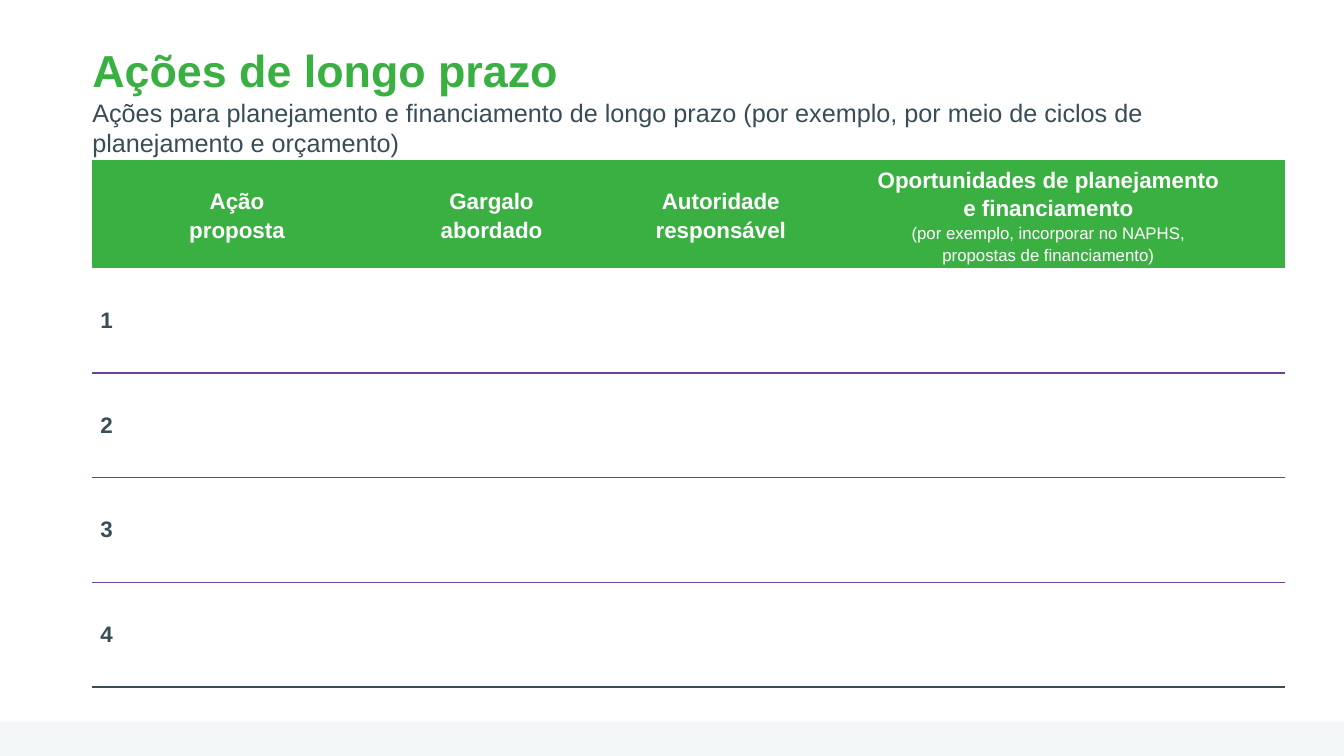
from lxml.etree import SubElement
from pptx import Presentation
from pptx.dml.color import RGBColor
from pptx.enum.shapes import MSO_SHAPE as Shape
from pptx.enum.text import MSO_ANCHOR as Anchor, PP_ALIGN as Align
from pptx.oxml import parse_xml
from pptx.oxml.ns import nsdecls, qn
from pptx.util import Pt

GREEN = RGBColor(0x3B, 0xB0, 0x42)
SLATE = RGBColor(0x38, 0x4D, 0x56)
PURPLE = RGBColor(0x6C, 0x44, 0x92)
PALE = RGBColor(0xF2, 0xF6, 0xF7)
WHITE = RGBColor(0xFF, 0xFF, 0xFF)
FONT = "Arial"
NO_TABLE_STYLE = "{2D5ABB26-0587-4C30-8999-92F81FD0307C}"

TITLE = "Ações de longo prazo"
SUBTITLE = ("Ações para planejamento e financiamento de longo prazo "
            "(por exemplo, por meio de ciclos de planejamento e orçamento)")
HEADINGS = [
    ["Ação", "proposta"],
    ["Gargalo", "abordado"],
    ["Autoridade", "responsável"],
    ["Oportunidades de planejamento", "e financiamento"],
]
HINT = ["(por exemplo, incorporar no NAPHS,", "propostas de financiamento)"]
COLUMN_WIDTHS = [20.16, 166.32, 197.28, 130.32, 337.68]
HEADER_HEIGHT = 60
ROW_HEIGHT = 74.75
ROW_LINES = [PURPLE, PURPLE, PURPLE, SLATE]


def style_font(font, size, color, bold):
    """Set the typeface, size, colour and weight of a font."""
    font.name, font.size, font.bold = FONT, Pt(size), bold
    font.color.rgb = color


def add_lines(para, lines, size, color, bold):
    """Append lines of text to a paragraph, parted by line breaks."""
    for line in lines:
        if para.runs:
            para.add_line_break()
        span = para.add_run()
        span.text = line
        style_font(span.font, size, color, bold)


def add_footer(slide, left, top, width, height):
    """Draw the pale band at the foot of the slide."""
    band = slide.shapes.add_shape(Shape.RECTANGLE, Pt(left), Pt(top), Pt(width), Pt(height))
    band.shadow.inherit = False
    band.fill.solid()
    band.fill.fore_color.rgb = PALE
    band.line.fill.background()


def add_title(slide, left, top, width, height):
    """Write the title with its subtitle below."""
    box = slide.shapes.add_textbox(Pt(left), Pt(top), Pt(width), Pt(height))
    frame = box.text_frame
    frame.word_wrap = True
    frame.vertical_anchor = Anchor.MIDDLE
    frame.margin_left = frame.margin_top = frame.margin_right = frame.margin_bottom = 0
    para = frame.paragraphs[0]
    add_lines(para, [TITLE], 32, GREEN, True)
    add_lines(para, [SUBTITLE], 18, SLATE, False)


def set_bottom_line(cell, color):
    """Rule the lower edge of a cell."""
    line = parse_xml(f'<a:lnB {nsdecls("a")} w="{Pt(1)}"/>')
    fill = SubElement(line, qn("a:solidFill"))
    SubElement(fill, qn("a:srgbClr"), val=str(color))
    cell._tc.get_or_add_tcPr().insert(0, line)


def prepare_cell(cell, side, end):
    """Centre a cell's text and set its side and end margins."""
    cell.vertical_anchor = Anchor.MIDDLE
    cell.margin_left = cell.margin_right = Pt(side)
    cell.margin_top = cell.margin_bottom = Pt(end)
    para = cell.text_frame.paragraphs[0]
    para.alignment = Align.CENTER
    return para


def add_action_table(slide, left, top):
    """Draw the table of proposed actions."""
    shape = slide.shapes.add_table(
        len(ROW_LINES) + 1, len(COLUMN_WIDTHS), Pt(left), Pt(top),
        Pt(sum(COLUMN_WIDTHS)), Pt(HEADER_HEIGHT + ROW_HEIGHT * len(ROW_LINES)))
    table = shape.table
    table.first_row = table.horz_banding = False
    table._tbl.tblPr.find(qn("a:tableStyleId")).text = NO_TABLE_STYLE
    for column, width in zip(table.columns, COLUMN_WIDTHS):
        column.width = Pt(width)

    table.rows[0].height = Pt(HEADER_HEIGHT)
    for cell, lines in zip(table.rows[0].cells, [[]] + HEADINGS):
        cell.fill.solid()
        cell.fill.fore_color.rgb = GREEN
        para = prepare_cell(cell, 5, 0)
        para.line_spacing = 1.15
        add_lines(para, lines, 16, WHITE, True)
    add_lines(para, HINT, 12, WHITE, False)

    for number, color in enumerate(ROW_LINES, 1):
        row = table.rows[number]
        row.height = Pt(ROW_HEIGHT)
        for cell in row.cells:
            cell.fill.background()
            set_bottom_line(cell, color)
        para = prepare_cell(row.cells[0], 3.6, 3.6)
        add_lines(para, [str(number)], 16, SLATE, True)


def main():
    """Build and save the deck."""
    deck = Presentation()
    deck.slide_width, deck.slide_height = Pt(960), Pt(540)
    page = deck.slides.add_slide(deck.slide_layouts[6])
    add_footer(page, 0, 515.5, 960, 24.5)
    add_title(page, 66, 28.8, 828, 85.7)
    add_action_table(page, 66, 114.5)
    deck.save("out.pptx")


if __name__ == "__main__":
    main()
